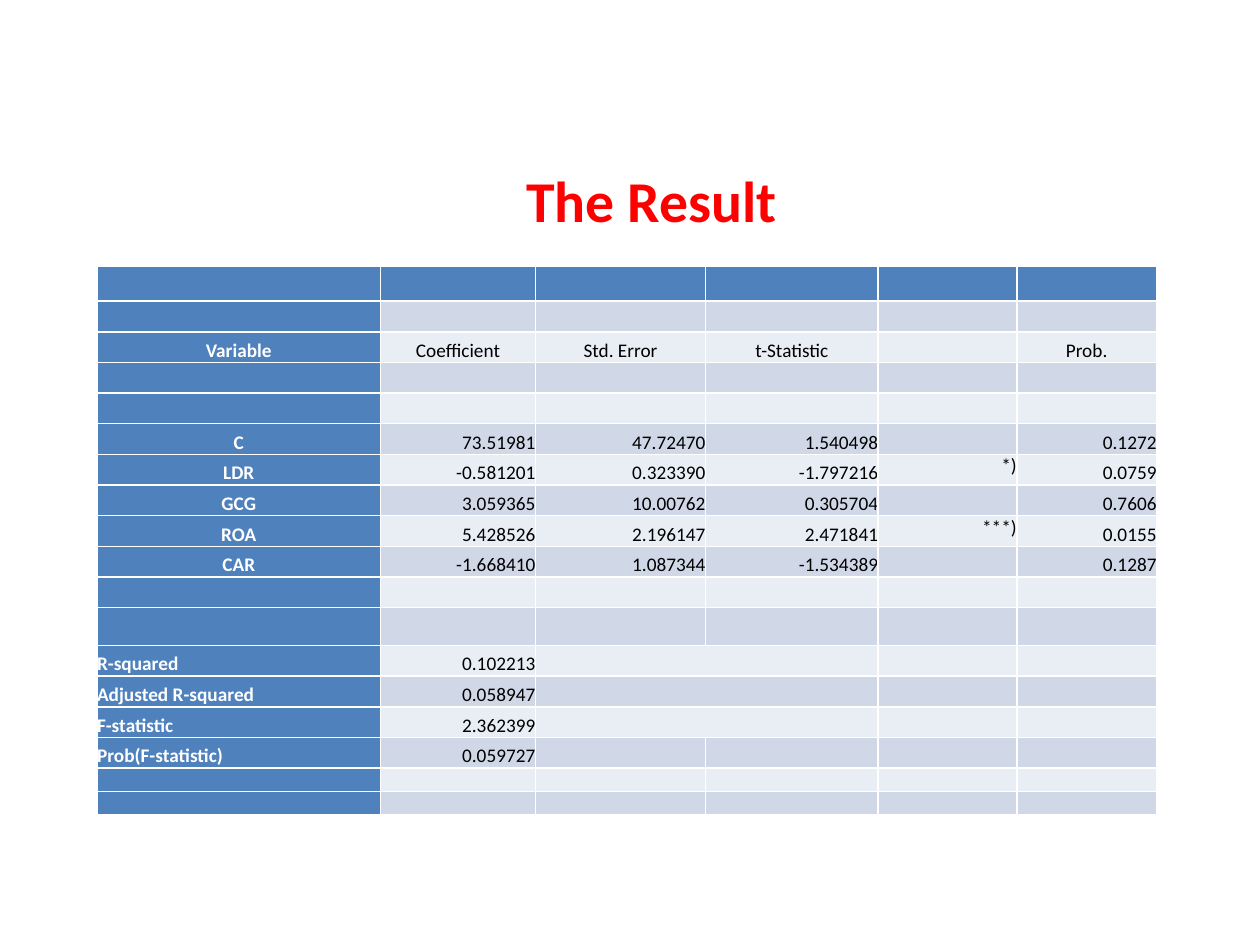
from dataclasses import dataclass

from pptx import Presentation
from pptx.dml.color import RGBColor
from pptx.enum.text import MSO_ANCHOR as Anchor, PP_ALIGN as Align
from pptx.slide import Slide
from pptx.util import Inches, Pt

TABLE_HEIGHT = 4.35
HEADER_HEIGHT, SPACER_HEIGHT, FOOTER_HEIGHT = 0.28, 0.3, 0.18
BODY_HEIGHT = (TABLE_HEIGHT - HEADER_HEIGHT - SPACER_HEIGHT - 2 * FOOTER_HEIGHT) / 14
ROW_HEIGHTS = (
    [HEADER_HEIGHT] + [BODY_HEIGHT] * 10 + [SPACER_HEIGHT]
    + [BODY_HEIGHT] * 4 + [FOOTER_HEIGHT] * 2
)
COLUMN_WIDTHS = [2.25, 1.23, 1.35, 1.37, 1.1, 1.11]
MARK_COLUMN = 4

HEADINGS_ROW, VARIABLES_ROW, SUMMARY_ROW = 2, 5, 12
HEADINGS = ["Variable", "Coefficient", "Std. Error", "t-Statistic", "", "Prob."]
VARIABLES = [
    ["C", "73.51981", "47.72470", "1.540498", "", "0.1272"],
    ["LDR", "-0.581201", "0.323390", "-1.797216", "*)", "0.0759"],
    ["GCG", "3.059365", "10.00762", "0.305704", "", "0.7606"],
    ["ROA", "5.428526", "2.196147", "2.471841", "***)", "0.0155"],
    ["CAR", "-1.668410", "1.087344", "-1.534389", "", "0.1287"],
]
SUMMARY = [
    ["R-squared", "0.102213"],
    ["Adjusted R-squared", "0.058947"],
    ["F-statistic", "2.362399"],
    ["Prob(F-statistic)", "0.059727"],
]


def rgb(hex_color):
    return RGBColor.from_string(hex_color)


@dataclass
class Deck:
    slide: Slide
    font: str = "Calibri"
    accent: str = "4F81BD"
    bands: tuple = ("E9EDF4", "D0D8E8")

    def style(self, paragraph, size, color, bold, align):
        paragraph.alignment = align
        font = paragraph.font
        font.name, font.size, font.bold = self.font, Pt(size), bold
        font.color.rgb = rgb(color)

    def title(self, text, left, top, width, height):
        box = self.slide.shapes.add_textbox(
            Inches(left), Inches(top), Inches(width), Inches(height)
        )
        frame = box.text_frame
        frame.word_wrap = True
        frame.vertical_anchor = Anchor.MIDDLE
        frame.text = text
        self.style(frame.paragraphs[0], 33, "FF0000", True, Align.CENTER)

    def cell(self, cell, text, row, column):
        labelled = row == 0 or column == 0
        cell.fill.solid()
        cell.fill.fore_color.rgb = rgb(self.accent if labelled else self.bands[row % 2])
        cell.margin_left = cell.margin_right = cell.margin_top = cell.margin_bottom = 0
        cell.vertical_anchor = Anchor.TOP if column == MARK_COLUMN else Anchor.BOTTOM
        cell.text = text
        if row == HEADINGS_ROW or (column == 0 and row < SUMMARY_ROW):
            align = Align.CENTER
        else:
            align = Align.LEFT if column == 0 else Align.RIGHT
        color = "FFFFFF" if labelled else "000000"
        self.style(cell.text_frame.paragraphs[0], 11, color, labelled, align)

    def table(self, contents, left, top):
        table = self.slide.shapes.add_table(
            len(ROW_HEIGHTS), len(COLUMN_WIDTHS), Inches(left), Inches(top),
            Inches(sum(COLUMN_WIDTHS)), Inches(TABLE_HEIGHT),
        ).table
        table.first_col = True
        for column, width in zip(table.columns, COLUMN_WIDTHS):
            column.width = Inches(width)
        for row, height in zip(table.rows, ROW_HEIGHTS):
            row.height = Inches(height)
        for row in range(len(ROW_HEIGHTS)):
            for column in range(len(COLUMN_WIDTHS)):
                text = contents.get((row, column), "")
                self.cell(table.cell(row, column), text, row, column)
        for row in range(SUMMARY_ROW, SUMMARY_ROW + 3):
            table.cell(row, 2).merge(table.cell(row, 3))


def main():
    presentation = Presentation()
    presentation.slide_width, presentation.slide_height = Inches(10), Inches(7.5)
    deck = Deck(presentation.slides.add_slide(presentation.slide_layouts[6]))
    deck.title("The Result", 1.26, 1.23, 7.82, 0.71)

    sections = [
        (HEADINGS_ROW, [HEADINGS]),
        (VARIABLES_ROW, VARIABLES),
        (SUMMARY_ROW, SUMMARY),
    ]
    contents = {
        (row, column): text
        for start, lines in sections
        for row, line in enumerate(lines, start)
        for column, text in enumerate(line)
    }
    deck.table(contents, 0.77, 2.11)
    presentation.save("out.pptx")


if __name__ == "__main__":
    main()
